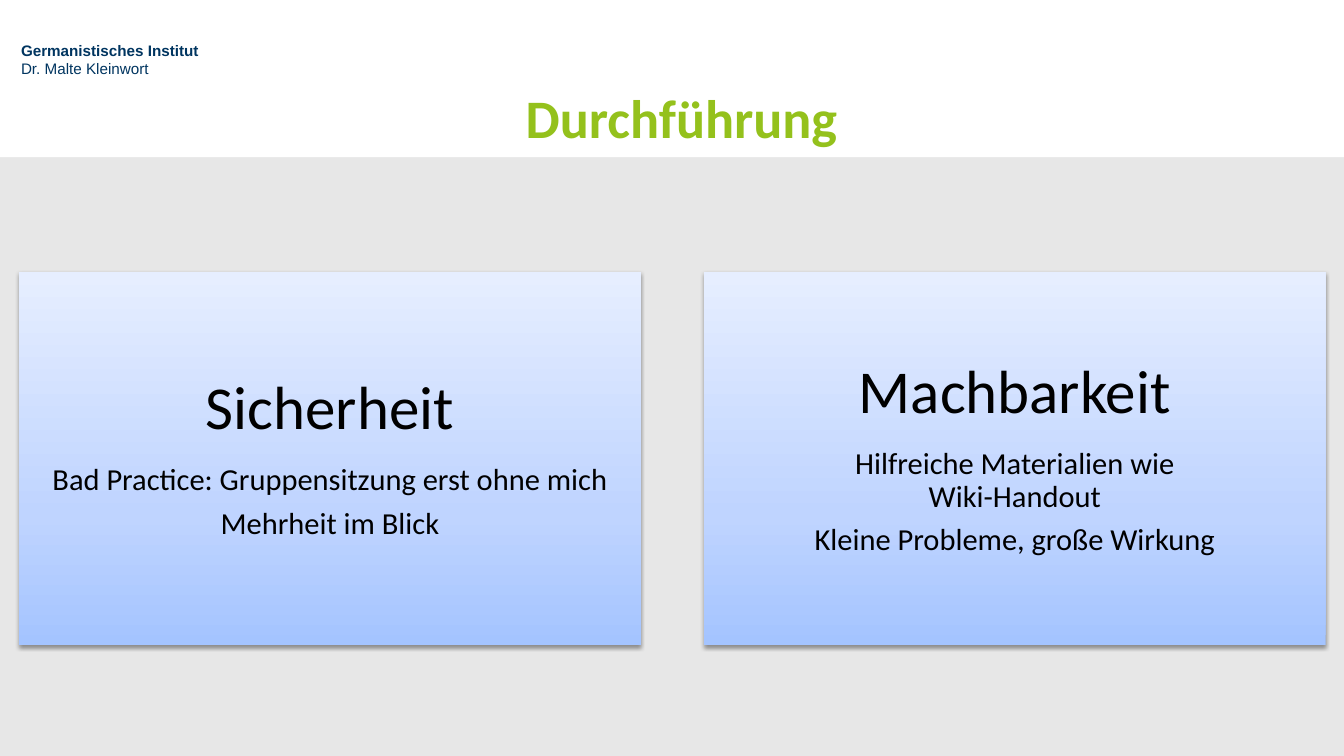
import copy
from dataclasses import dataclass

import pptx
import pptx.dml.color
import pptx.enum.shapes
import pptx.enum.text
import pptx.oxml
import pptx.oxml.ns
import pptx.shapes.autoshape
import pptx.slide
import pptx.text.text
import pptx.util
from lxml import etree

Pt = pptx.util.Pt
RGBColor = pptx.dml.color.RGBColor
Align = pptx.enum.text.PP_ALIGN
Anchor = pptx.enum.text.MSO_ANCHOR
Shape = pptx.shapes.autoshape.Shape
qn = pptx.oxml.ns.qn

WHITE = RGBColor(0xFF, 0xFF, 0xFF)
BLACK = RGBColor(0, 0, 0)
GRAY = RGBColor(0xE7, 0xE7, 0xE7)
NAVY = RGBColor(0x00, 0x35, 0x60)
GREEN = RGBColor(0x94, 0xC1, 0x1C)
STOPS = (
    (0, RGBColor(0xA4, 0xC4, 0xFF)),
    (0.35, RGBColor(0xBF, 0xD4, 0xFF)),
    (1, RGBColor(0xE6, 0xEE, 0xFF)),
)

WIDTH, HEIGHT = 1058.4, 595.44
EDGE, TOP = 15.12, 214.56
CARD_W, CARD_H, GAP = 489.6, 293.76, 49.68
PAD = 14.4

HEAD = {"name": "Arial", "size": Pt(12), "bold": True}
NAME = HEAD | {"bold": False}
TITLE = {"name": "Calibri", "size": Pt(42.7), "bold": True}
TOPIC = {"name": "Calibri", "size": Pt(48)}
POINT = TOPIC | {"size": Pt(24)}


@dataclass
class Box:
    x: float
    y: float
    w: float
    h: float

    def spans(self) -> list[pptx.util.Length]:
        return [Pt(v) for v in (self.x, self.y, self.w, self.h)]


@dataclass
class Card:
    topic: str
    points: list[tuple[str, ...]]


CARDS = [
    Card("Sicherheit", [
        ("Bad Practice: Gruppensitzung erst ohne mich",),
        ("Mehrheit im Blick",),
    ]),
    Card("Machbarkeit", [
        ("Hilfreiche Materialien wie", "Wiki-Handout"),
        ("Kleine Probleme, große Wirkung",),
    ]),
]


def write(para: pptx.text.text._Paragraph, lines: tuple[str, ...],
          style: dict, color: RGBColor) -> None:
    """Fill a paragraph, with a line break between lines."""
    for i, line in enumerate(lines):
        if i:
            para.add_line_break()
        run = para.add_run()
        run.text = line
        for key, value in style.items():
            setattr(run.font, key, value)
        run.font.color.rgb = color


def inset(frame: pptx.text.text.TextFrame, pad: float) -> None:
    for side in ("left", "top", "right", "bottom"):
        setattr(frame, f"margin_{side}", Pt(pad))


def add_rect(slide: pptx.slide.Slide, box: Box) -> Shape:
    rect = slide.shapes.add_shape(
        pptx.enum.shapes.MSO_SHAPE.RECTANGLE, *box.spans())
    rect.line.fill.background()
    rect.shadow.inherit = False
    return rect


def shade(rect: Shape) -> None:
    """Give a card its gradient and soft drop shadow."""
    fill = rect.fill
    fill.gradient()
    fill.gradient_angle = 90
    props = rect._element.spPr
    stops = props.find(".//" + qn("a:gsLst"))
    stops.append(copy.deepcopy(stops[0]))
    for stop, (place, color) in zip(fill.gradient_stops, STOPS):
        stop.position = place
        stop.color.rgb = color
    drop = etree.SubElement(
        props.find(qn("a:effectLst")), qn("a:outerShdw"),
        blurRad=str(Pt(3.1)), dist=str(Pt(1.6)), dir="5400000",
        rotWithShape="0")
    tone = etree.SubElement(drop, qn("a:srgbClr"), val=str(BLACK))
    etree.SubElement(tone, qn("a:alpha"), val="38000")


def add_card(slide: pptx.slide.Slide, card: Card, box: Box) -> None:
    rect = add_rect(slide, box)
    shade(rect)
    frame = rect.text_frame
    frame.word_wrap = True
    frame.vertical_anchor = Anchor.MIDDLE
    inset(frame, PAD)
    rows = [((card.topic,), TOPIC)] + [(p, POINT) for p in card.points]
    for i, (lines, style) in enumerate(rows):
        para = frame.add_paragraph() if i else frame.paragraphs[0]
        para.alignment = Align.CENTER
        para.line_spacing = 0.9
        para.space_after = Pt(0.35 * style["size"].pt)
        write(para, lines, style, BLACK)


def add_head(slide: pptx.slide.Slide) -> None:
    band = add_rect(slide, Box(0, 0, WIDTH, 123.84))
    band.fill.solid()
    band.fill.fore_color.rgb = WHITE

    label = slide.shapes.add_textbox(*Box(16.56, 32.4, 205.2, 45.36).spans())
    frame = label.text_frame
    frame.word_wrap = True
    inset(frame, 0)
    write(frame.paragraphs[0], ("Germanistisches Institut",), HEAD, NAVY)
    write(frame.add_paragraph(), ("Dr. Malte Kleinwort",), NAME, NAVY)

    title = slide.shapes.add_textbox(
        *Box(EDGE, 62.64, WIDTH - EDGE, 59.04).spans())
    frame = title.text_frame
    frame.word_wrap = True
    frame.vertical_anchor = Anchor.MIDDLE
    frame.paragraphs[0].alignment = Align.CENTER
    write(frame.paragraphs[0], ("Durchführung",), TITLE, GREEN)


def main() -> None:
    deck = pptx.Presentation()
    deck.slide_width, deck.slide_height = Pt(WIDTH), Pt(HEIGHT)
    slide = deck.slides.add_slide(deck.slide_layouts[6])
    slide.background.fill.solid()
    slide.background.fill.fore_color.rgb = GRAY
    add_head(slide)
    for i, card in enumerate(CARDS):
        add_card(slide, card, Box(EDGE + i * (CARD_W + GAP), TOP, CARD_W, CARD_H))
    deck.save("out.pptx")


if __name__ == "__main__":
    main()
